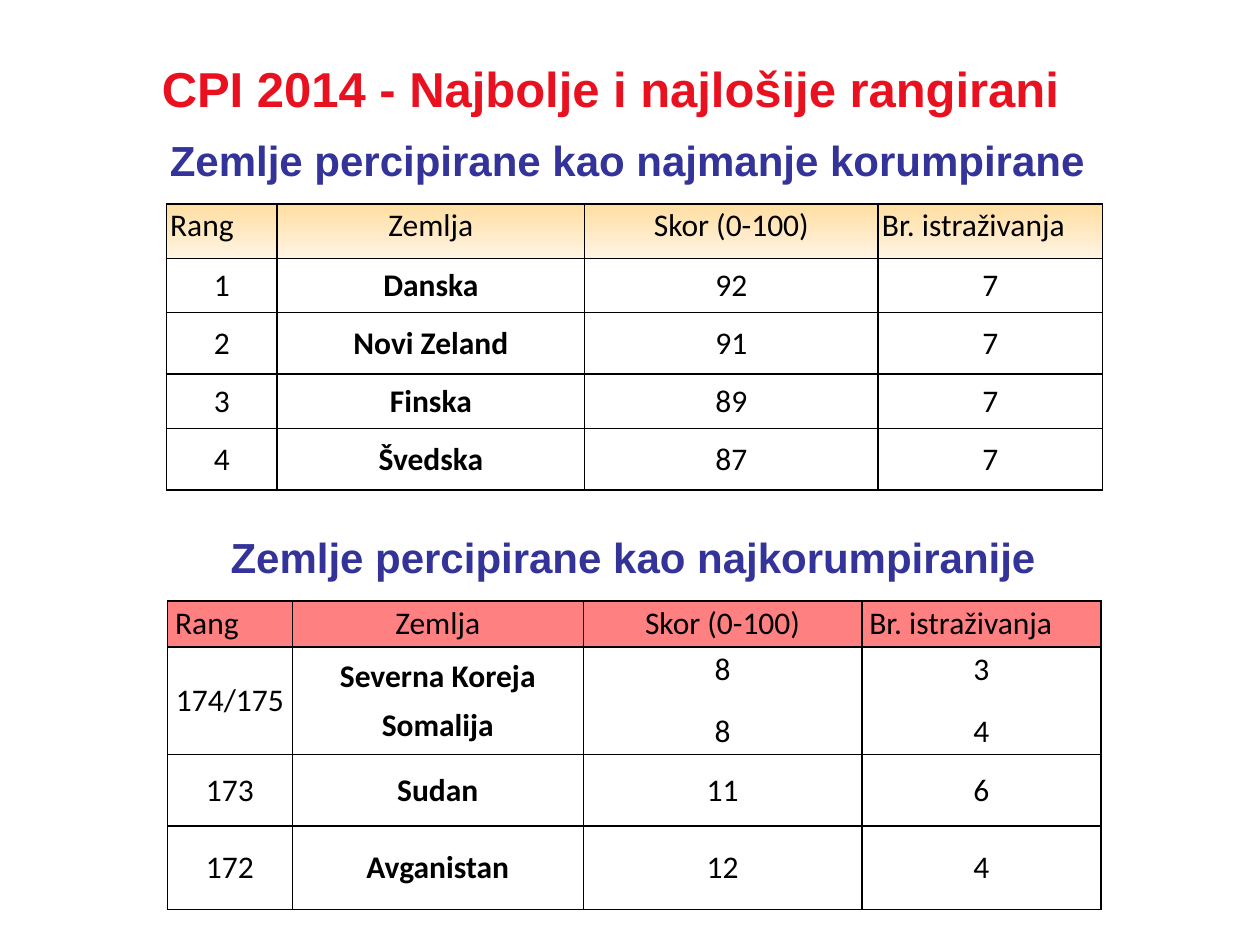
from dataclasses import dataclass

from lxml import etree
from pptx import Presentation
from pptx import util as u
from pptx.dml import color
from pptx.enum import text
from pptx.oxml import ns

CENTER, LEFT = text.PP_ALIGN.CENTER, text.PP_ALIGN.LEFT
HEADER = ("Rang", "Zemlja", "Skor (0-100)", "Br. istraživanja")
COUNTRY = 1


@dataclass
class Heading:
    words: str
    at: tuple[float, float, float, float]
    align: text.PP_ALIGN
    indent: float = 0


@dataclass
class Ranking:
    at: tuple[float, float, float, float]
    columns: tuple[float, ...]
    heights: tuple[float, ...]
    rows: list[tuple[str, ...]]
    header_fill: tuple[str, ...]
    margins: tuple[float, float]
    country_gap: int


HEADINGS = [
    Heading("Zemlje percipirane kao najkorumpiranije", (1.64, 4.17, 6.77, 0.91), CENTER),
    Heading("Zemlje percipirane kao najmanje korumpirane", (1.06, 1.02, 7.87, 0.47), LEFT, 0.19),
]
RANKINGS = [
    Ranking(
        (1.32, 1.62, 7.42, 2.28),
        (0.88, 2.44, 2.33, 1.78),
        (0.43, 0.43, 0.49, 0.43, 0.49),
        [("1", "Danska", "92", "7"), ("2", "Novi Zeland", "91", "7"),
         ("3", "Finska", "89", "7"), ("4", "Švedska", "87", "7")],
        ("FFDEA2", "FFF4E3"), (0.03, 0.02), 13,
    ),
    Ranking(
        (1.33, 4.77, 7.42, 2.44),
        (0.99, 2.31, 2.21, 1.9),
        (0.34, 0.8, 0.57, 0.66),
        [("174/175", "Severna Koreja\nSomalija", "8\n8", "3\n4"),
         ("173", "Sudan", "11", "6"), ("172", "Avganistan", "12", "4")],
        ("FF8080",), (0.06, 0.03), 6,
    ),
]


def rgb(value: str) -> color.RGBColor:
    return color.RGBColor.from_string(value)


def inches(values: tuple[float, ...]) -> list[u.Length]:
    return [u.Inches(value) for value in values]


def set_font(para, name: str, size: int, shade: str, bold: bool) -> None:
    para.font.name = name
    para.font.size = u.Pt(size)
    para.font.color.rgb = rgb(shade)
    para.font.bold = bold


def add_title(page, words: str) -> None:
    title = page.shapes.title
    title.left, title.top, title.width, title.height = inches((0.83, 0.28, 8.03, 0.83))
    frame = title.text_frame
    frame.text = words
    frame.vertical_anchor = text.MSO_ANCHOR.MIDDLE
    para = frame.paragraphs[0]
    para.alignment = CENTER
    set_font(para, "Arial", 28, "E91120", True)


def add_heading(page, heading: Heading) -> None:
    frame = page.shapes.add_textbox(*inches(heading.at)).text_frame
    frame.word_wrap = True
    frame.text = heading.words
    para = frame.paragraphs[0]
    para.alignment = heading.align
    if heading.indent:
        para._p.get_or_add_pPr().set("marL", str(u.Inches(heading.indent)))
    set_font(para, "Arial", 24, "333399", True)


def add_borders(cell) -> None:
    properties = cell._tc.get_or_add_tcPr()
    for side in ("lnL", "lnR", "lnT", "lnB"):
        line = etree.SubElement(properties, ns.qn(f"a:{side}"), w=str(u.Pt(1)))
        fill = etree.SubElement(line, ns.qn("a:solidFill"))
        etree.SubElement(fill, ns.qn("a:srgbClr"), val="000000")


def fill_cell(cell, shades: tuple[str, ...]) -> None:
    if not shades:
        cell.fill.background()
    elif len(shades) == 1:
        cell.fill.solid()
        cell.fill.fore_color.rgb = rgb(shades[0])
    else:
        cell.fill.gradient()
        cell.fill.gradient_angle = 270
        for stop, shade in zip(cell.fill.gradient_stops, shades):
            stop.color.rgb = rgb(shade)


def write_cell(cell, words: str, ranking: Ranking, is_header: bool, column: int) -> None:
    is_country = column == COUNTRY and not is_header
    cell.margin_left = cell.margin_right = u.Inches(ranking.margins[0])
    cell.margin_top = cell.margin_bottom = u.Inches(ranking.margins[1])
    cell.vertical_anchor = text.MSO_ANCHOR.TOP if is_header else text.MSO_ANCHOR.MIDDLE
    add_borders(cell)
    fill_cell(cell, ranking.header_fill if is_header else ())
    cell.text_frame.text = words
    for para in cell.text_frame.paragraphs:
        para.alignment = LEFT if is_header and column in (0, 3) else CENTER
        para.line_spacing = u.Pt(22)
        para.space_after = u.Pt(ranking.country_gap if is_country else 13)
        set_font(para, "Calibri", 18, "000000", is_country)


def add_ranking(page, ranking: Ranking) -> None:
    rows = [HEADER, *ranking.rows]
    table = page.shapes.add_table(len(rows), len(HEADER), *inches(ranking.at)).table
    table.first_row = table.horz_banding = False
    for column, width in zip(table.columns, inches(ranking.columns)):
        column.width = width
    for row, height in zip(table.rows, inches(ranking.heights)):
        row.height = height
    for r, row in enumerate(rows):
        for c, words in enumerate(row):
            write_cell(table.cell(r, c), words, ranking, r == 0, c)


def main() -> None:
    deck = Presentation()
    deck.slide_width, deck.slide_height = inches((10, 7.5))
    page = deck.slides.add_slide(deck.slide_layouts.get_by_name("Title Only"))
    add_title(page, "CPI 2014 - Najbolje i najlošije rangirani")
    for heading in HEADINGS:
        add_heading(page, heading)
    for ranking in RANKINGS:
        add_ranking(page, ranking)
    deck.save("out.pptx")


if __name__ == "__main__":
    main()
